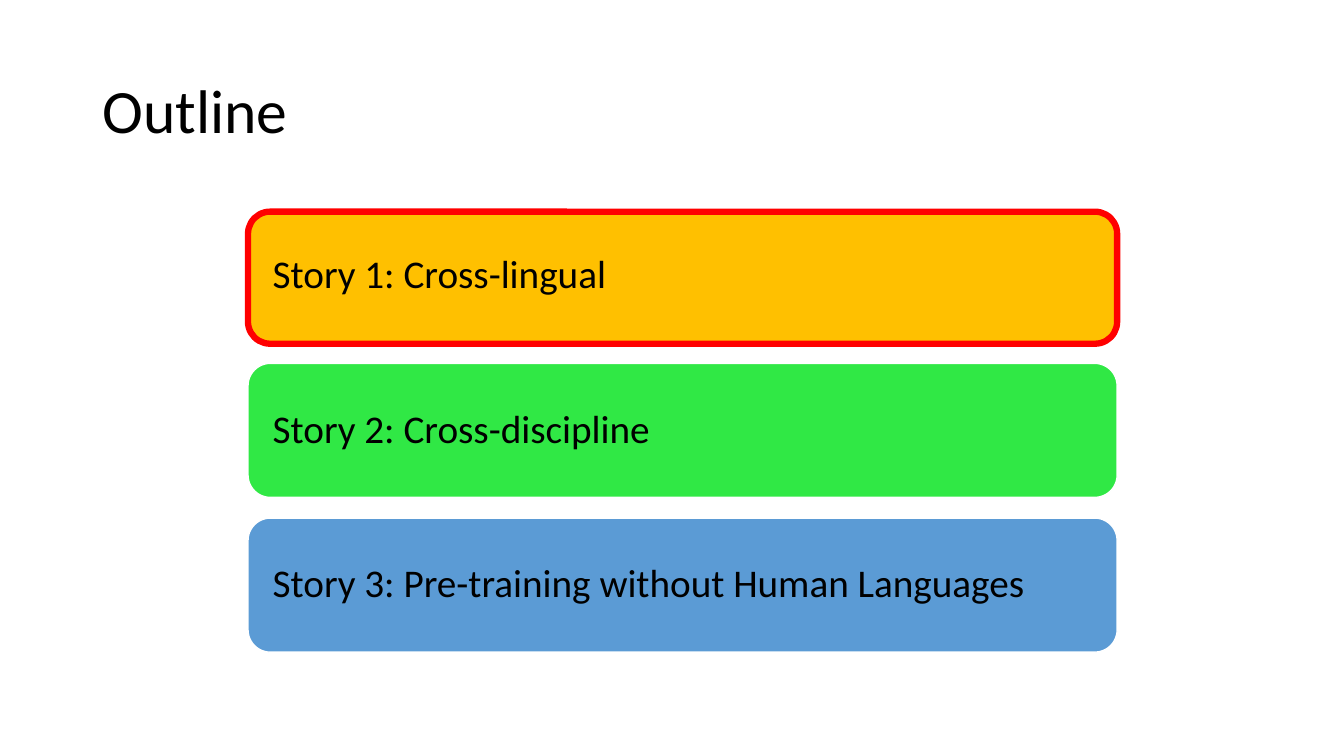
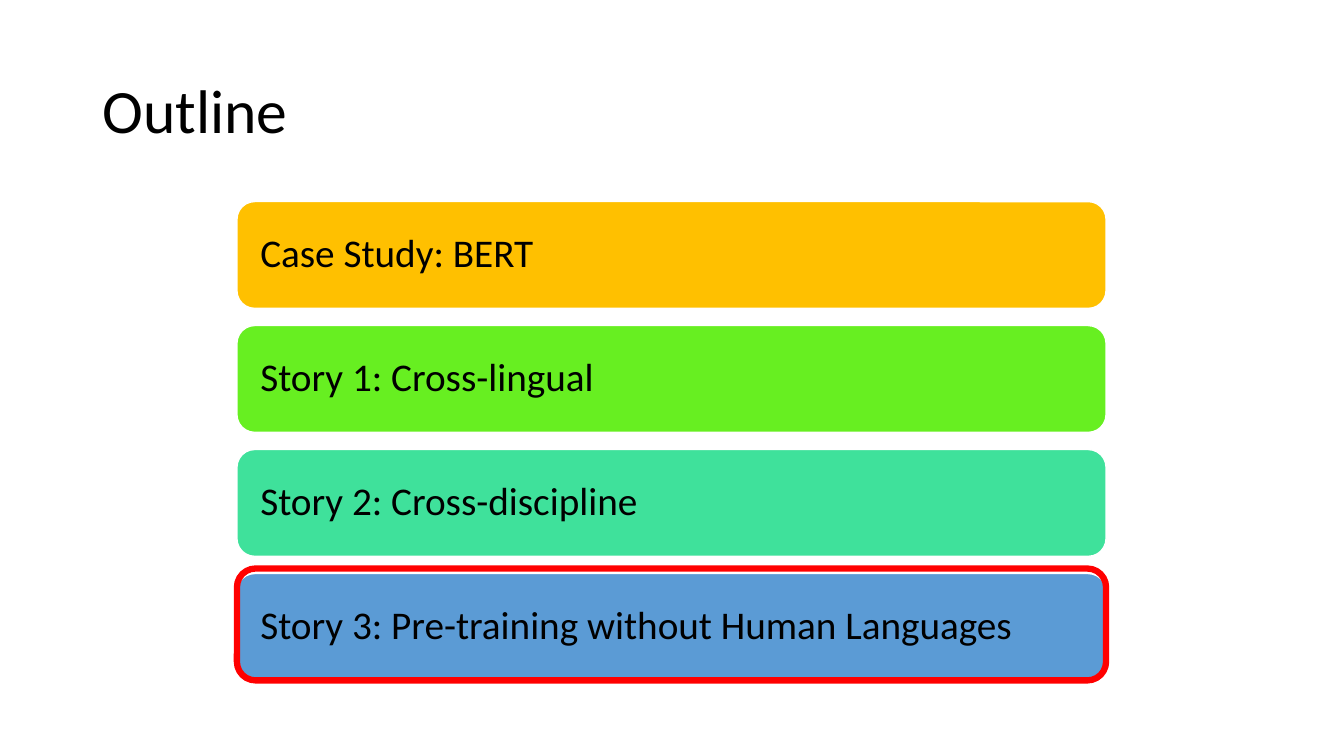
from dataclasses import dataclass
from pptx import Presentation
from pptx.dml.color import RGBColor
from pptx.enum.shapes import MSO_SHAPE
from pptx.enum.text import MSO_ANCHOR, PP_ALIGN
from pptx.util import Inches, Pt

ROUND = MSO_SHAPE.ROUNDED_RECTANGLE
MIDDLE = MSO_ANCHOR.MIDDLE
LEFT = PP_ALIGN.LEFT


@dataclass(frozen=True)
class Theme:
    font: str = "Calibri"
    ink: str = "000000"
    paper: str = "FFFFFF"
    mark: str = "FF0000"
    amber: str = "FFC000"
    blue: str = "5B9BD5"
    title: int = 44
    body: int = 28
    edge: float = 1
    thick: float = 4.5


THEME = Theme()

# Content: bars run evenly from the first top to the last; frame is (top, height)
TITLE = "Outline"
STORIES = [
    "Story 1: Cross-lingual",
    "Story 2: Cross-discipline",
    "Story 3: Pre-training without Human Languages",
]
WIDTH = 8.62
SLIDES = [
    {
        "bars": list(zip(STORIES, [THEME.amber, "30E845", THEME.blue])),
        "left": 2.46, "first": 2.07, "last": 5.14, "height": 1.33,
        "frame": (2.1, 1.31),
    },
    {
        "bars": list(zip(["Case Study: BERT"] + STORIES,
                         [THEME.amber, "67EF21", "3FE19B", THEME.blue])),
        "left": 2.35, "first": 2, "last": 5.69, "height": 1.06,
        "frame": (5.64, 1.11),
    },
]


# Shared helpers
def write(shape, text, size, inset):
    frame = shape.text_frame
    frame.word_wrap = True
    frame.vertical_anchor = MIDDLE
    frame.margin_left = frame.margin_right = Inches(inset)
    frame.text = text
    para = frame.paragraphs[0]
    para.alignment = LEFT
    para.line_spacing = 0.9
    font = para.runs[0].font
    font.name, font.size = THEME.font, Pt(size)
    font.color.rgb = RGBColor.from_string(THEME.ink)


def add_box(slide, left, top, height, line, weight, fill=None):
    box = slide.shapes.add_shape(
        ROUND, Inches(left), Inches(top), Inches(WIDTH), Inches(height))
    box.shadow.inherit = False
    box.line.color.rgb = RGBColor.from_string(line)
    box.line.width = Pt(weight)
    if fill:
        box.fill.solid()
        box.fill.fore_color.rgb = RGBColor.from_string(fill)
    else:
        box.fill.background()
    return box


def add_title(slide):
    box = slide.shapes.add_textbox(
        Inches(0.92), Inches(0.4), Inches(11.5), Inches(1.45))
    write(box, TITLE, THEME.title, 0.1)


# One outline slide: title, stacked bars, frame round the current one
def add_outline(deck, data):
    slide = deck.slides.add_slide(deck.slide_layouts[6])
    add_title(slide)
    left, bars = data["left"], data["bars"]
    step = (data["last"] - data["first"]) / (len(bars) - 1)
    for i, (text, fill) in enumerate(bars):
        bar = add_box(slide, left, data["first"] + i * step, data["height"],
                      THEME.paper, THEME.edge, fill)
        write(bar, text, THEME.body, 0.18)
    top, height = data["frame"]
    add_box(slide, left, top, height, THEME.mark, THEME.thick)


def main():
    deck = Presentation()
    deck.slide_width, deck.slide_height = Inches(13.33), Inches(7.5)
    for data in SLIDES:
        add_outline(deck, data)
    deck.save("out.pptx")


if __name__ == "__main__":
    main()
